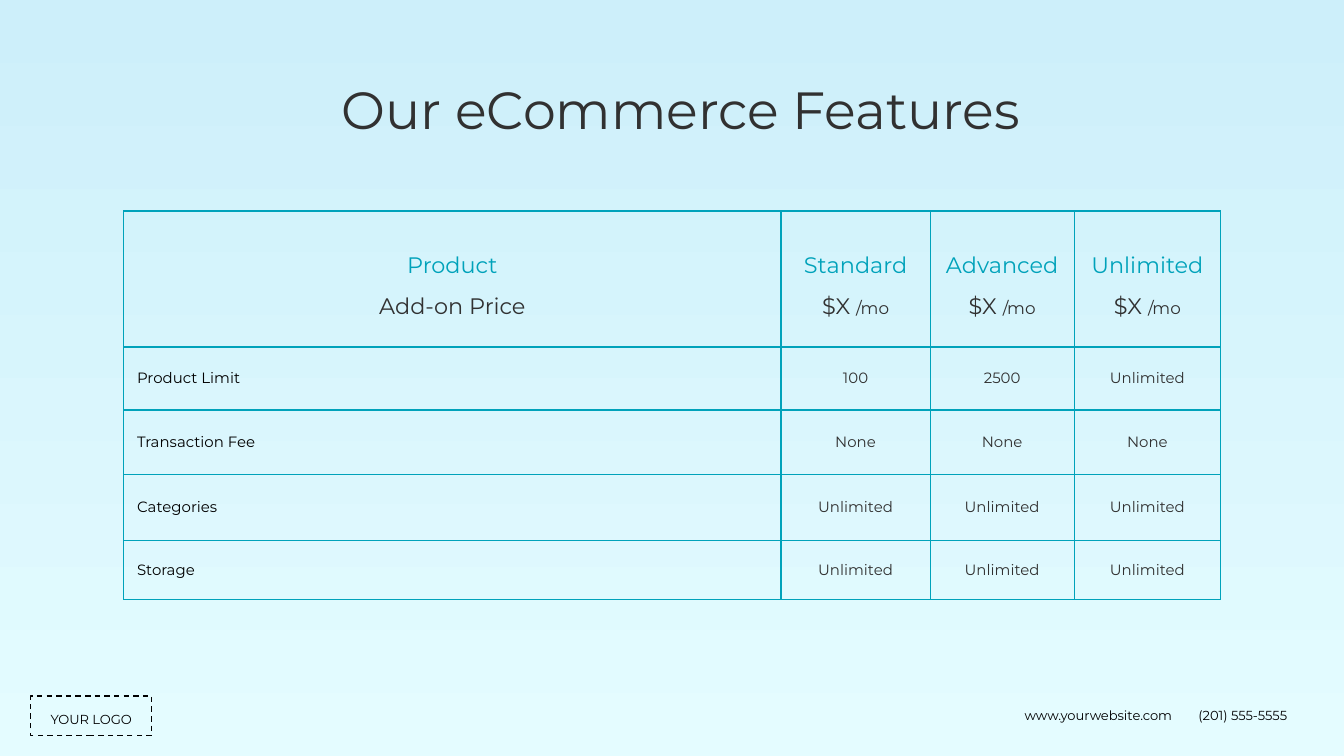
from dataclasses import dataclass
from typing import Optional

from lxml.etree import SubElement
from pptx import Presentation
from pptx.dml.color import RGBColor
from pptx.enum.dml import MSO_LINE
from pptx.enum.shapes import MSO_SHAPE
from pptx.enum.text import MSO_ANCHOR, PP_ALIGN
from pptx.oxml import parse_xml
from pptx.oxml.ns import nsdecls
from pptx.util import Cm, Pt

FONT = "Montserrat"
SKY = RGBColor(0xCD, 0xEF, 0xFA)
ICE = RGBColor(0xE4, 0xFC, 0xFF)
TEAL = RGBColor(0x00, 0xA2, 0xBA)
INK = RGBColor(0x31, 0x31, 0x31)
BLACK = RGBColor(0x00, 0x00, 0x00)
INSET = Cm(0.25)


@dataclass(frozen=True)
class Style:
    size: float
    color: RGBColor
    align: PP_ALIGN = PP_ALIGN.CENTER
    spacing: Optional[float] = None
    after: Optional[float] = None


@dataclass(frozen=True)
class Label:
    text: str
    left: float
    top: float
    width: float
    height: float
    style: Style
    dashed: bool = False


@dataclass(frozen=True)
class Plan:
    name: str
    price: str
    period: str = ""


PLAN_NAME = Style(12, TEAL, spacing=1.5)
PLAN_PRICE = Style(12, INK, spacing=1.5)
FEATURE = Style(8, BLACK, PP_ALIGN.LEFT)
VALUE = Style(8, INK)

FOOTER_TOP, FOOTER_HEIGHT = 13.16, 0.74
LABELS = [
    Label("Our eCommerce Features", 2.03, 1.22, 21.67, 1.75, Style(28, INK)),
    Label("www.yourwebsite.com", 18.77, FOOTER_TOP, 3.63, FOOTER_HEIGHT,
          Style(7, BLACK, PP_ALIGN.RIGHT, 1.15, 16)),
    Label("(201) 555-5555", 22.4, FOOTER_TOP, 2.46, FOOTER_HEIGHT,
          Style(7, BLACK, PP_ALIGN.LEFT, 1.15, 16)),
    Label("YOUR LOGO", 0.58, FOOTER_TOP, 2.29, FOOTER_HEIGHT,
          Style(7, BLACK, PP_ALIGN.CENTER, 1.15, 16), dashed=True),
]

PLANS = [
    Plan("Product", "Add-on Price"),
    Plan("Standard", "$X ", "/mo"),
    Plan("Advanced", "$X ", "/mo"),
    Plan("Unlimited", "$X ", "/mo"),
]
FEATURES = [
    ("Product Limit", "100", "2500", "Unlimited"),
    ("Transaction Fee", "None", "None", "None"),
    ("Categories", "Unlimited", "Unlimited", "Unlimited"),
    ("Storage", "Unlimited", "Unlimited", "Unlimited"),
]
COLUMN_WIDTHS = [12.42, 2.82, 2.72, 2.77]
ROW_HEIGHTS = [2.57, 1.19, 1.22, 1.24, 1.12]


def write(p, text: str, style: Style) -> None:
    p.alignment = style.align
    if style.spacing is not None:
        p.line_spacing = style.spacing
    if style.after is not None:
        p.space_after = Pt(style.after)
    p.font.name = FONT
    p.font.size = Pt(style.size)
    p.font.color.rgb = style.color
    p.add_run().text = text


def set_insets(box) -> None:
    box.margin_left = box.margin_right = INSET
    box.margin_top = box.margin_bottom = INSET


def add_label(s, label: Label) -> None:
    place = [Cm(n) for n in (label.left, label.top, label.width, label.height)]
    if label.dashed:
        sp = s.shapes.add_shape(MSO_SHAPE.RECTANGLE, *place)
        sp.shadow.inherit = False
        sp.fill.background()
        sp.line.color.rgb = BLACK
        sp.line.width = Pt(0.75)
        sp.line.dash_style = MSO_LINE.DASH
    else:
        sp = s.shapes.add_textbox(*place)
    tf = sp.text_frame
    tf.word_wrap = True
    tf.vertical_anchor = MSO_ANCHOR.TOP
    set_insets(tf)
    write(tf.paragraphs[0], label.text, label.style)


def format_cell(cell) -> None:
    cell.fill.background()
    cell.vertical_anchor = MSO_ANCHOR.MIDDLE
    set_insets(cell)
    tc_pr = cell._tc.get_or_add_tcPr()
    for i, side in enumerate("LRTB"):
        ln = parse_xml(f'<a:ln{side} {nsdecls("a")} w="{Pt(0.75)}"><a:solidFill/></a:ln{side}>')
        SubElement(ln[0], ln[0].tag.replace("solidFill", "srgbClr"), val=str(TEAL))
        tc_pr.insert(i, ln)


def add_plan(cell, plan: Plan) -> None:
    tf = cell.text_frame
    write(tf.paragraphs[0], plan.name, PLAN_NAME)
    p = tf.add_paragraph()
    write(p, plan.price, PLAN_PRICE)
    if plan.period:
        r = p.add_run()
        r.text = plan.period
        r.font.size = Pt(9)


def add_feature_table(s) -> None:
    table = s.shapes.add_table(
        len(ROW_HEIGHTS), len(COLUMN_WIDTHS), Cm(2.34), Cm(3.99),
        Cm(sum(COLUMN_WIDTHS)), Cm(sum(ROW_HEIGHTS))).table
    table.first_row = False
    table.horz_banding = False
    for column, width in zip(table.columns, COLUMN_WIDTHS):
        column.width = Cm(width)
    for row, height in zip(table.rows, ROW_HEIGHTS):
        row.height = Cm(height)
    for cell in table.iter_cells():
        format_cell(cell)
    for col, plan in enumerate(PLANS):
        add_plan(table.cell(0, col), plan)
    for row, texts in enumerate(FEATURES, start=1):
        for col, text in enumerate(texts):
            p = table.cell(row, col).text_frame.paragraphs[0]
            write(p, text, VALUE if col else FEATURE)


def main() -> None:
    prs = Presentation()
    prs.slide_width, prs.slide_height = Cm(25.4), Cm(14.29)
    s = prs.slides.add_slide(prs.slide_layouts[6])
    fill = s.background.fill
    fill.gradient()
    fill.gradient_angle = 270
    for stop, color in zip(fill.gradient_stops, (SKY, ICE)):
        stop.color.rgb = color
    add_feature_table(s)
    for label in LABELS:
        add_label(s, label)
    prs.save("out.pptx")


if __name__ == "__main__":
    main()
